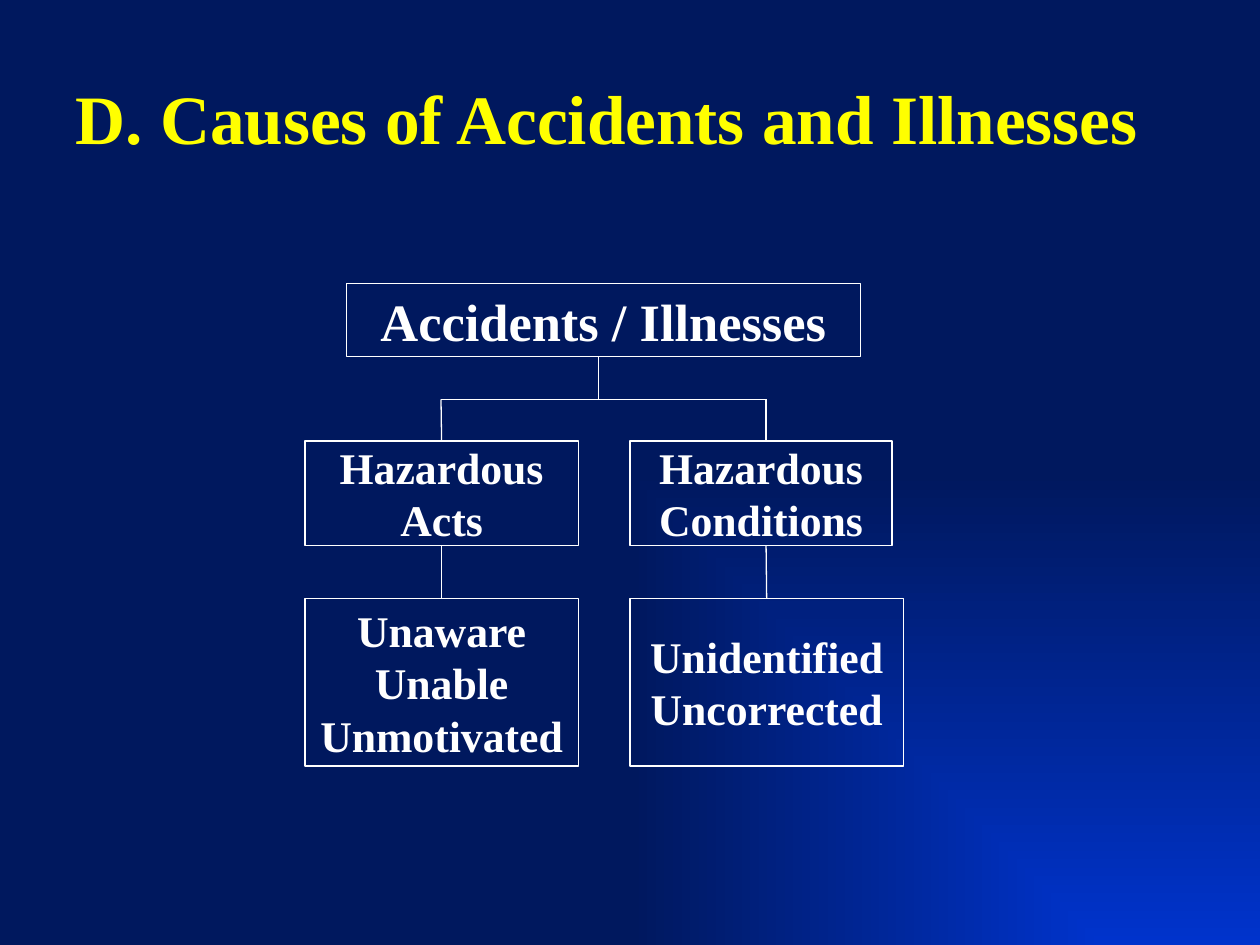
from lxml import etree
from pptx import Presentation
from pptx.dml.color import RGBColor
from pptx.enum.shapes import MSO_CONNECTOR, MSO_SHAPE
from pptx.enum.text import MSO_ANCHOR, PP_ALIGN
from pptx.oxml.ns import qn
from pptx.util import Inches, Pt

BLUE = RGBColor(0x00, 0x33, 0xCC)
NAVY = RGBColor(0x00, 0x18, 0x5E)
YELLOW = RGBColor(0xFF, 0xFF, 0x00)
WHITE = RGBColor(0xFF, 0xFF, 0xFF)
FONT = "Times New Roman"
RECT = MSO_SHAPE.RECTANGLE
STRAIGHT = MSO_CONNECTOR.STRAIGHT
MIDDLE = MSO_ANCHOR.MIDDLE
LEFT, CENTER = PP_ALIGN.LEFT, PP_ALIGN.CENTER
TOP, BOTTOM = 0, 2


def paint_back(slide):
    """Fill the background with a gradient that spreads from the bottom right."""
    fill = slide.background.fill
    fill.gradient()
    for stop, color in zip(fill.gradient_stops, (BLUE, NAVY)):
        stop.color.rgb = color
    grad = slide.element.find(".//" + qn("a:gradFill"))
    grad.remove(grad.find(qn("a:lin")))
    shade = etree.SubElement(grad, qn("a:path"))
    shade.set("path", "rect")
    focus = etree.SubElement(shade, qn("a:fillToRect"))
    focus.set("l", "100000")
    focus.set("t", "100000")


def set_text(shape, text, size, color, align, wrap):
    frame = shape.text_frame
    frame.word_wrap = wrap
    frame.vertical_anchor = MIDDLE
    frame.text = text
    for para in frame.paragraphs:
        para.alignment = align
        for run in para.runs:
            font = run.font
            font.name, font.size, font.bold = FONT, Pt(size), True
            font.color.rgb = color


def add_title(slide, text):
    box = slide.shapes.add_textbox(Inches(0.5), Inches(0.3), Inches(9), Inches(1.25))
    set_text(box, text, 39.6, YELLOW, LEFT, True)


def add_box(slide, text, left, top, width, height, size=25):
    box = slide.shapes.add_shape(
        RECT, Inches(left), Inches(top), Inches(width), Inches(height))
    box.shadow.inherit = False
    box.fill.background()
    box.line.color.rgb = WHITE
    box.line.width = Pt(0.75)
    set_text(box, text, size, WHITE, CENTER, False)
    return box


def add_line(slide, x1, y1, x2, y2):
    line = slide.shapes.add_connector(
        STRAIGHT, Inches(x1), Inches(y1), Inches(x2), Inches(y2))
    line.line.color.rgb = WHITE
    line.line.width = Pt(0.75)
    etree.SubElement(line.element.spPr, qn("a:effectLst"))
    return line


def main():
    deck = Presentation()
    deck.slide_width, deck.slide_height = Inches(10), Inches(7.5)
    slide = deck.slides.add_slide(deck.slide_layouts[6])
    paint_back(slide)
    add_title(slide, "D. Causes of Accidents and Illnesses")

    add_box(slide, "Accidents / Illnesses", 2.75, 2.25, 4.08, 0.58, 30)
    acts = add_box(slide, "Hazardous\nActs", 2.42, 3.5, 2.17, 0.83)
    add_box(slide, "Hazardous\nConditions", 5, 3.5, 2.08, 0.83)
    people = add_box(slide, "Unaware\nUnable\nUnmotivated", 2.42, 4.75, 2.17, 1.33)
    places = add_box(slide, "Unidentified\nUncorrected", 5, 4.75, 2.17, 1.33)

    left, right, bar = 3.5, 6.08, 3.17
    add_line(slide, 4.75, 2.83, 4.75, bar)
    add_line(slide, left, bar, right, bar)
    drops = []
    for x in (left, right):
        upper = add_line(slide, x, bar, x, 3.5)
        lower = add_line(slide, x, 4.33, x, 4.75)
        drops.append((upper, lower))
    (to_acts, to_people), (_, to_places) = drops
    to_acts.end_connect(acts, TOP)
    to_people.begin_connect(acts, BOTTOM)
    to_people.end_connect(people, TOP)
    to_places.end_connect(places, TOP)

    deck.save("out.pptx")


if __name__ == "__main__":
    main()
